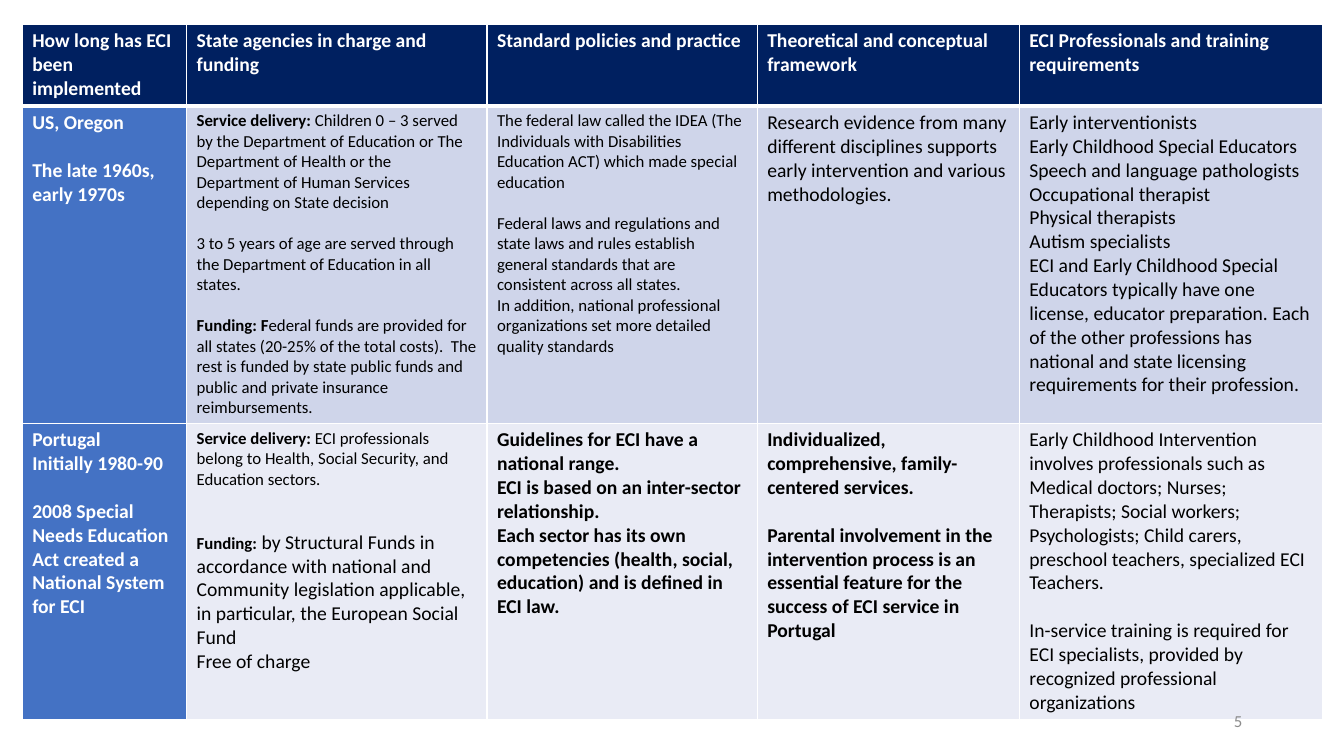
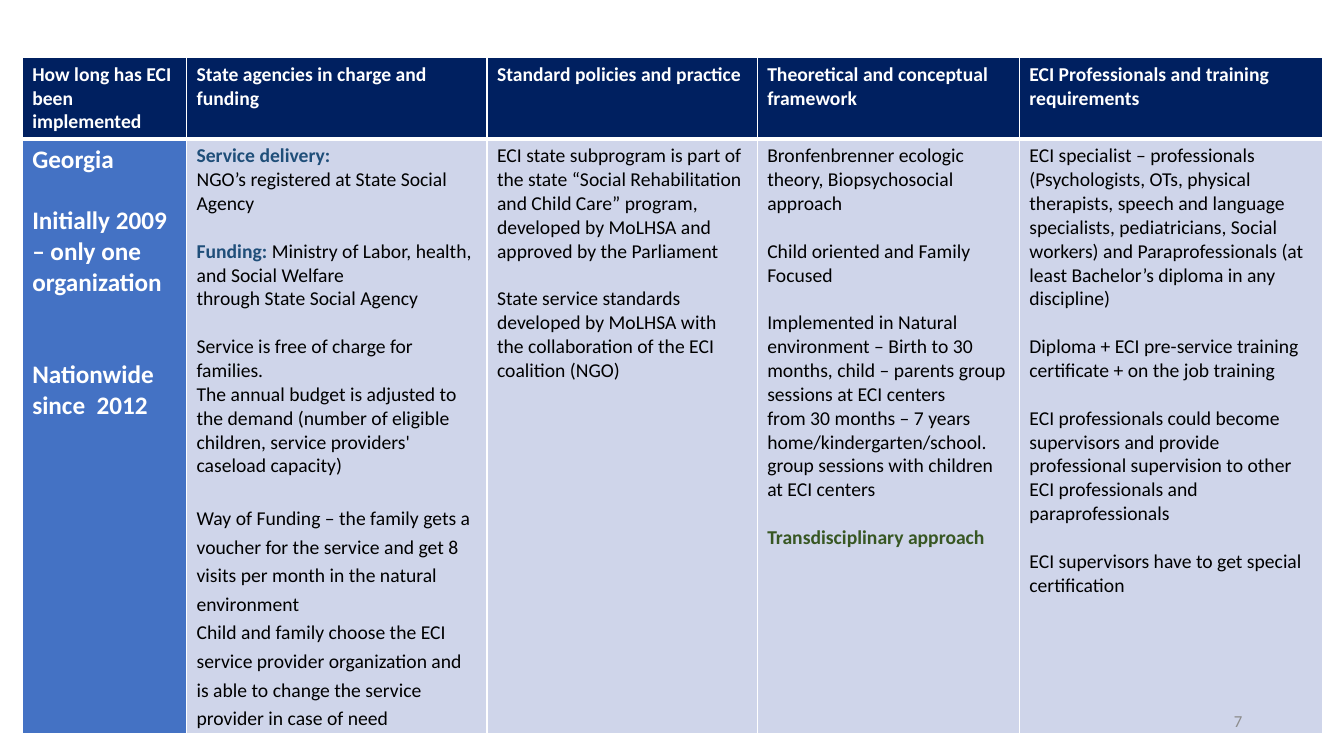
"""Build two slides of tables that compare early childhood intervention by country."""
from dataclasses import dataclass

from lxml import etree
from pptx import Presentation
from pptx.dml.color import RGBColor
from pptx.enum.text import MSO_ANCHOR, PP_ALIGN
from pptx.oxml.ns import qn
from pptx.util import Inches, Pt

NAVY = RGBColor(0x00, 0x20, 0x60)
BLUE = RGBColor(0x44, 0x72, 0xC4)
BAND = RGBColor(0xCF, 0xD5, 0xEA)
PALE = RGBColor(0xE9, 0xEB, 0xF5)
WHITE = RGBColor(0xFF, 0xFF, 0xFF)
BLACK = RGBColor(0x00, 0x00, 0x00)
GRAY = RGBColor(0x8C, 0x8C, 0x8C)
TEAL = RGBColor(0x1F, 0x4E, 0x79)
GREEN = RGBColor(0x38, 0x57, 0x23)
FONT = "Calibri"
LINE = 1.22
LEFT = 0.22
COLS = [1.63, 2.98, 2.68, 2.6, 3.01]
TOP_ROW = 0.81


@dataclass
class Para:
    """A paragraph with an optional bold lead and a gap in lines above it."""
    text: str
    lead: str = ""
    gap: int = 0
    size: int = 14
    lead_size: int = 0
    bold: bool = False
    color: RGBColor = BLACK
    tint: RGBColor = BLACK
    space: float = 1.0


def label(text, gap=0, size=14):
    return Para(text, gap=gap, size=size, bold=True, color=WHITE)


def small(text, lead="", gap=0):
    return Para(text, lead, gap, size=12)


def strong(text, gap=0):
    return Para(text, gap=gap, bold=True)


HEADS = [
    "How long has ECI been implemented",
    "State agencies in charge and funding",
    "Standard policies and practice",
    "Theoretical and conceptual framework",
    "ECI Professionals and training requirements",
]

OREGON = [
    [label("US, Oregon"), label("The late 1960s, early 1970s", 1)],
    [
        small("Children 0 – 3 served by the Department of Education or The Department of "
              "Health or the Department of Human Services depending on State decision",
              "Service delivery: "),
        small("3 to 5 years of age are served through the Department of Education in all "
              "states.", gap=1),
        small("ederal funds are provided for all states (20-25% of the total costs).  The "
              "rest is funded by state public funds and public and private insurance "
              "reimbursements.", "Funding: F", 1),
    ],
    [
        small("The federal law called the IDEA (The Individuals with Disabilities Education "
              "ACT) which made special education"),
        small("Federal laws and regulations and state laws and rules establish general "
              "standards that are consistent across all states.", gap=1),
        small("In addition, national professional organizations set more detailed quality "
              "standards"),
    ],
    [Para("Research evidence from many different disciplines supports early intervention "
          "and various methodologies.")],
    [
        Para("Early interventionists"),
        Para("Early Childhood Special Educators"),
        Para("Speech and language pathologists"),
        Para("Occupational therapist"),
        Para("Physical therapists"),
        Para("Autism specialists"),
        Para("ECI and Early Childhood Special Educators typically have one license, educator "
             "preparation. Each of the other professions has national and state licensing "
             "requirements for their profession."),
    ],
]

PORTUGAL = [
    [
        label("Portugal"),
        label("Initially 1980-90"),
        label("2008 Special Needs Education Act created a National System for ECI", 1),
    ],
    [
        small("ECI professionals belong to Health, Social Security, and Education sectors.",
              "Service delivery: "),
        Para(" by Structural Funds in accordance with national and Community legislation "
             "applicable, in particular, the European Social Fund",
             "Funding:", 2, lead_size=12),
        Para("Free of charge"),
    ],
    [
        strong("Guidelines for ECI have a national range."),
        strong("ECI is based on an inter-sector relationship."),
        strong("Each sector has its own competencies (health, social, education) and is "
               "defined in ECI law."),
    ],
    [
        strong("Individualized, comprehensive, family-centered services."),
        strong("Parental involvement in the intervention process is an essential feature for "
               "the success of ECI service in Portugal", 1),
    ],
    [
        Para("Early Childhood Intervention involves professionals such as Medical doctors; "
             "Nurses; Therapists; Social workers; Psychologists; Child carers, preschool "
             "teachers, specialized ECI Teachers."),
        Para("In-service training is required for ECI specialists, provided by recognized "
             "professional organizations", gap=1),
    ],
]

GEORGIA = [
    [
        label("Georgia", size=18),
        label("Initially 2009 – only one organization", 1, 18),
        label("Nationwide since  2012", 2, 18),
    ],
    [
        Para("", "Service delivery:", tint=TEAL),
        Para("NGO’s registered at State Social Agency"),
        Para("Ministry of Labor, health, and Social Welfare", "Funding: ", 1, tint=TEAL),
        Para("through State Social Agency"),
        Para("Service is free of charge for families.", gap=1),
        Para("The annual budget is adjusted to the demand (number of eligible children, "
             "service providers' caseload capacity)"),
        Para("Way of Funding – the family gets a voucher for the service and get 8 visits "
             "per month in the natural environment", gap=1, space=1.2),
        Para("Child and family choose the ECI service provider organization and is able to "
             "change the service provider in case of need", space=1.2),
    ],
    [
        Para("ECI state subprogram is part of the state “Social Rehabilitation and Child "
             "Care” program, developed by MoLHSA and approved by the Parliament"),
        Para("State service standards developed by MoLHSA with the collaboration of the ECI "
             "coalition (NGO)", gap=1),
    ],
    [
        Para("Bronfenbrenner ecologic theory, Biopsychosocial approach"),
        Para("Child oriented and Family Focused", gap=1),
        Para("Implemented in Natural environment – Birth to 30 months, child – parents group "
             "sessions at ECI centers", gap=1),
        Para("from 30 months – 7 years home/kindergarten/school. group sessions with "
             "children at ECI centers"),
        Para("Transdisciplinary approach", gap=1, bold=True, color=GREEN),
    ],
    [
        Para("ECI specialist – professionals (Psychologists, OTs, physical therapists, speech "
             "and language specialists, pediatricians, Social workers) and Paraprofessionals "
             "(at least Bachelor’s diploma in any discipline)"),
        Para("Diploma + ECI pre-service training certificate + on the job training", gap=1),
        Para("ECI professionals could become supervisors and provide professional "
             "supervision to other ECI professionals and paraprofessionals", gap=1),
        Para("ECI supervisors have to get special certification", gap=1),
    ],
]

SLIDES = [
    {"top": 0.24, "rows": [OREGON, PORTUGAL], "heights": [3.14, 2.94], "number": "5"},
    {"top": 0.57, "rows": [GEORGIA], "heights": [5.9], "number": "7"},
]


def add_run(line, text, bold, color, size=0):
    run = line.add_run()
    run.text = text
    run.font.bold = bold
    run.font.color.rgb = color
    if size:
        run.font.size = Pt(size)


def write(frame, paras):
    for i, para in enumerate(paras):
        line = frame.add_paragraph() if i else frame.paragraphs[0]
        line.font.name = FONT
        line.font.size = Pt(para.size)
        line.line_spacing = para.space
        line.space_before = Pt(para.gap * (para.lead_size or para.size) * LINE)
        if para.lead:
            add_run(line, para.lead, True, para.tint, para.lead_size)
        if para.text:
            add_run(line, para.text, para.bold, para.color)


def edge(cell, row):
    props = cell._tc.get_or_add_tcPr()
    widths = {"L": 1, "R": 1, "T": 3 if row == 1 else 1, "B": 1 if row else 3}
    for side, width in widths.items():
        line = etree.SubElement(props, qn(f"a:ln{side}"), w=str(Pt(width)))
        fill = etree.SubElement(line, qn("a:solidFill"))
        etree.SubElement(fill, qn("a:srgbClr"), val=str(WHITE))


def add_grid(slide, top, rows, heights):
    rows = [[[label(head)] for head in HEADS]] + rows
    heights = [TOP_ROW] + heights
    table = slide.shapes.add_table(
        len(rows), len(COLS), Inches(LEFT), Inches(top),
        Inches(sum(COLS)), Inches(sum(heights))).table
    table.first_row = table.horz_banding = False
    for column, width in zip(table.columns, COLS):
        column.width = Inches(width)
    for r, (row, height) in enumerate(zip(rows, heights)):
        table.rows[r].height = Inches(height)
        for c, paras in enumerate(row):
            cell = table.cell(r, c)
            edge(cell, r)
            cell.fill.solid()
            body = BLUE if c == 0 else (BAND, PALE)[r - 1]
            cell.fill.fore_color.rgb = body if r else NAVY
            write(cell.text_frame, paras)


def add_number(slide, number):
    box = slide.shapes.add_textbox(Inches(9.42), Inches(6.95), Inches(3), Inches(0.4))
    frame = box.text_frame
    frame.word_wrap = True
    frame.vertical_anchor = MSO_ANCHOR.MIDDLE
    write(frame, [Para(number, size=12, color=GRAY)])
    frame.paragraphs[0].alignment = PP_ALIGN.RIGHT


def main():
    deck = Presentation()
    deck.slide_width, deck.slide_height = Inches(13.33), Inches(7.5)
    for data in SLIDES:
        slide = deck.slides.add_slide(deck.slide_layouts[6])
        add_grid(slide, data["top"], data["rows"], data["heights"])
        add_number(slide, data["number"])
    deck.save("out.pptx")


if __name__ == "__main__":
    main()
